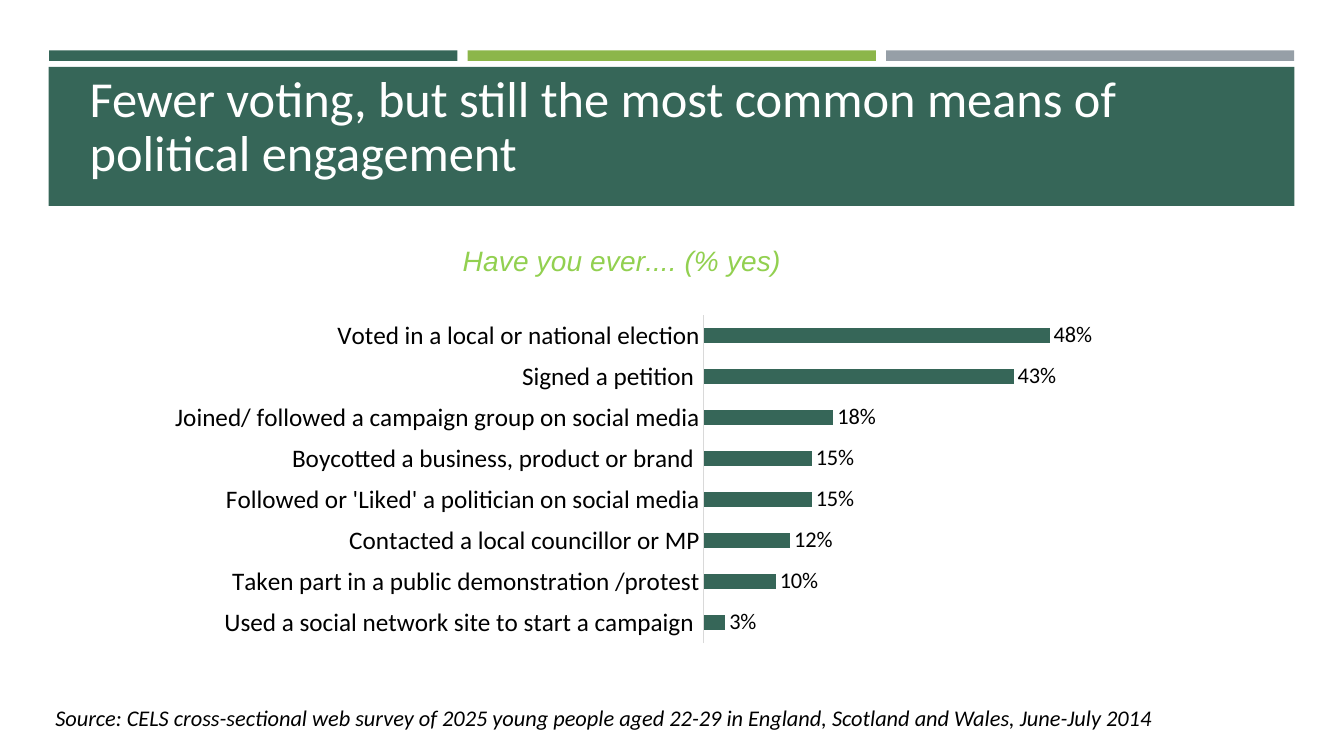
from lxml.etree import SubElement
from pptx import Presentation
from pptx.chart.data import CategoryChartData
from pptx.dml.color import RGBColor
from pptx.enum.chart import XL_CHART_TYPE, XL_LABEL_POSITION, XL_TICK_MARK
from pptx.enum.shapes import MSO_SHAPE
from pptx.enum.text import MSO_ANCHOR
from pptx.oxml import parse_xml
from pptx.oxml.ns import nsdecls, qn
from pptx.util import Pt

COLORS = {
    "green": "366658", "lime": "8CB64A", "grey": "969FA7", "heading": "92D050",
    "axis": "D9D9D9", "black": "000000", "white": "FFFFFF",
}
ANSWERS = [
    ("Used a social network site to start a campaign ", 0.03),
    ("Taken part in a public demonstration /protest", 0.10),
    ("Contacted a local councillor or MP", 0.12),
    ("Followed or 'Liked' a politician on social media", 0.15),
    ("Boycotted a business, product or brand ", 0.15),
    ("Joined/ followed a campaign group on social media", 0.18),
    ("Signed a petition ", 0.43),
    ("Voted in a local or national election", 0.48),
]


def set_font(font, size, color, name="Calibri", italic=False):
    font.size, font.name = Pt(size), name
    font.bold, font.italic = False, italic
    font.color.rgb = RGBColor.from_string(COLORS[color])


def add_text(box, text, size, color, italic=False):
    """Put one wrapped run in a text box and return its paragraph."""
    tf = box.text_frame
    tf.word_wrap = True
    p = tf.paragraphs[0]
    r = p.add_run()
    r.text = text
    set_font(r.font, size, color, italic=italic)
    return p


prs = Presentation()
prs.slide_width, prs.slide_height = Pt(960), Pt(540)
s = prs.slides.add_slide(prs.slide_layouts[6])

# Three accent strips above the title band
bands = [(35.1 + 298.9 * i, 36, 291.6, 7.5, color)
         for i, color in enumerate(("green", "lime", "grey"))]
bands.append((34.8, 47.7, 889.8, 99.3, "green"))
for left, top, width, height, color in bands:
    sp = s.shapes.add_shape(MSO_SHAPE.RECTANGLE, Pt(left), Pt(top), Pt(width), Pt(height))
    sp.shadow.inherit = False
    sp.fill.solid()
    sp.fill.fore_color.rgb = RGBColor.from_string(COLORS[color])
    sp.line.fill.background()

title = s.shapes.add_textbox(Pt(57), Pt(73.5), Pt(803.5), Pt(60.5))
title.text_frame.vertical_anchor = MSO_ANCHOR.BOTTOM
p = add_text(title, "Fewer voting, but still the most common means of political engagement", 36, "white")
p.line_spacing = 0.9

source = s.shapes.add_textbox(Pt(32.4), Pt(499.7), Pt(879), Pt(26.6))
add_text(source, "Source: CELS cross-sectional web survey of 2025 young people aged 22-29 "
         "in England, Scotland and Wales, June-July 2014", 16, "black", italic=True)

# Survey chart
data = CategoryChartData(number_format="0%")
data.categories = [answer for answer, _ in ANSWERS]
data.add_series("Series 1", [share for _, share in ANSWERS])
chart = s.shapes.add_chart(XL_CHART_TYPE.BAR_CLUSTERED, Pt(59), Pt(159.8),
                           Pt(770.4), Pt(321.8), data).chart
set_font(chart.font, 10, "black")
chart.has_legend = False

chart.has_title = True
r = chart.chart_title.text_frame.paragraphs[0].add_run()
r.text = "Have you ever.... (% yes)"
set_font(r.font, 20, "heading", "Arial", italic=True)
chart.chart_title.include_in_layout = False

category_axis = chart.category_axis
category_axis.major_tick_mark = category_axis.minor_tick_mark = XL_TICK_MARK.NONE
category_axis.has_major_gridlines = False
set_font(category_axis.tick_labels.font, 18, "black")
category_axis.format.line.width = Pt(0.75)
category_axis.format.line.color.rgb = RGBColor.from_string(COLORS["axis"])

value_axis = chart.value_axis
value_axis.minimum_scale, value_axis.maximum_scale = 0, 0.6
value_axis.has_major_gridlines = False
value_axis.visible = False

plot = chart.plots[0]
plot.gap_width = 182
plot.vary_by_categories = False
fill = plot.series[0].format.fill
fill.solid()
fill.fore_color.rgb = RGBColor.from_string(COLORS["green"])
plot.has_data_labels = True
labels = plot.data_labels
labels.show_value = True
labels.number_format, labels.number_format_is_linked = "0%", False
labels.position = XL_LABEL_POSITION.OUTSIDE_END
set_font(labels.font, 16, "black")

# Fixed inner plot area, as fractions of the chart
plot_area = chart.element.find(".//" + qn("c:plotArea"))
for old in plot_area.findall(qn("c:layout")):
    plot_area.remove(old)
layout = parse_xml(f"<c:layout {nsdecls('c')}><c:manualLayout/></c:layout>")
for tag, val in [("layoutTarget", "inner"), ("xMode", "edge"), ("yMode", "edge"),
                 ("x", "0.576"), ("y", "0.203"), ("w", "0.401"), ("h", "0.728")]:
    SubElement(layout[0], qn("c:" + tag)).set("val", val)
plot_area.insert(0, layout)

prs.save("out.pptx")
